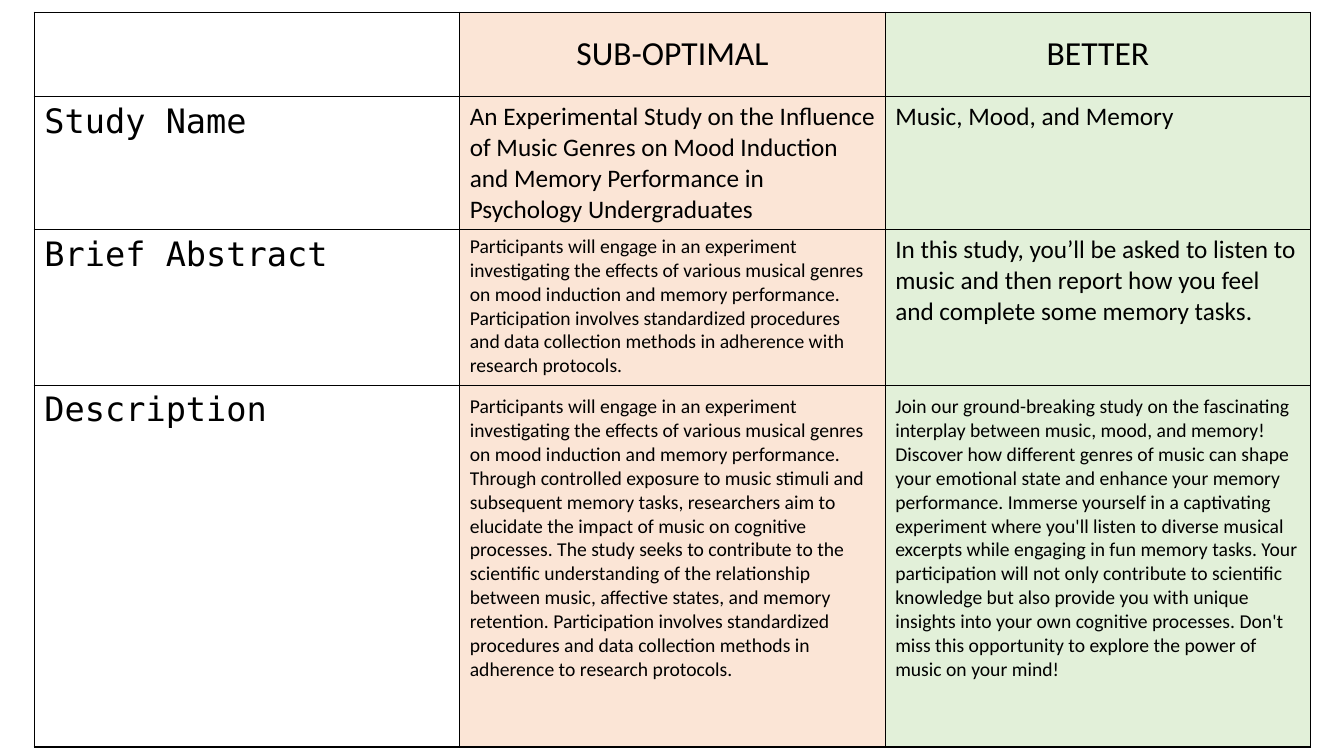
from lxml import etree
from pptx import Presentation
from pptx import util as u
from pptx.dml.color import RGBColor
from pptx.enum import text
from pptx.oxml import ns

BLACK = RGBColor(0x00, 0x00, 0x00)
PEACH = RGBColor(0xFB, 0xE5, 0xD6)
GREEN = RGBColor(0xE2, 0xF0, 0xD9)

COLUMN_FILLS = [None, PEACH, GREEN]
COLUMN_WIDTH = 4.22
ROW_HEIGHTS = [0.84, 1.32, 1.54, 3.59]

# Each row holds a label, the sub-optimal wording and the better wording
ROWS = [
    ["", "SUB-OPTIMAL", "BETTER"],
    ["Study Name",
     "An Experimental Study on the Influence of Music Genres on Mood Induction "
     "and Memory Performance in Psychology Undergraduates",
     "Music, Mood, and Memory"],
    ["Brief Abstract",
     "Participants will engage in an experiment investigating the effects of various "
     "musical genres on mood induction and memory performance. Participation involves "
     "standardized procedures and data collection methods in adherence with research "
     "protocols.",
     "In this study, you’ll be asked to listen to music and then report how you feel "
     "and complete some memory tasks."],
    ["Description",
     "Participants will engage in an experiment investigating the effects of various "
     "musical genres on mood induction and memory performance. Through controlled "
     "exposure to music stimuli and subsequent memory tasks, researchers aim to "
     "elucidate the impact of music on cognitive processes. The study seeks to "
     "contribute to the scientific understanding of the relationship between music, "
     "affective states, and memory retention. Participation involves standardized "
     "procedures and data collection methods in adherence to research protocols.",
     "Join our ground-breaking study on the fascinating interplay between music, mood, "
     "and memory! Discover how different genres of music can shape your emotional state "
     "and enhance your memory performance. Immerse yourself in a captivating experiment "
     "where you'll listen to diverse musical excerpts while engaging in fun memory "
     "tasks. Your participation will not only contribute to scientific knowledge but "
     "also provide you with unique insights into your own cognitive processes. Don't "
     "miss this opportunity to explore the power of music on your mind!"],
]
FONT_SIZES = [[24, 24, 24], [24, 18, 18], [24, 14, 18], [24, 14, 14]]


def add_borders(cell, color, width):
    """Draw a solid line on all four sides of a table cell."""
    properties = cell._tc.get_or_add_tcPr()
    for position, side in enumerate(["lnL", "lnR", "lnT", "lnB"]):
        line = etree.Element(ns.qn(f"a:{side}"), w=str(u.Pt(width)))
        fill = etree.SubElement(line, ns.qn("a:solidFill"))
        etree.SubElement(fill, ns.qn("a:srgbClr"), val=str(color))
        properties.insert(position, line)


deck = Presentation()
deck.slide_width = u.Inches(13.33)
deck.slide_height = u.Inches(7.5)
page = deck.slides.add_slide(deck.slide_layouts[6])

# Comparison table
frame = page.shapes.add_table(
    len(ROWS), len(COLUMN_FILLS), u.Inches(0.34), u.Inches(0.12),
    u.Inches(COLUMN_WIDTH * len(COLUMN_FILLS)), u.Inches(sum(ROW_HEIGHTS)))
table = frame.table
table.first_row = False
table.horz_banding = False
for column in table.columns:
    column.width = u.Inches(COLUMN_WIDTH)
for row, height in zip(table.rows, ROW_HEIGHTS):
    row.height = u.Inches(height)

# Cell text, fills and borders
for r, wordings in enumerate(ROWS):
    for c, wording in enumerate(wordings):
        cell = table.cell(r, c)
        if COLUMN_FILLS[c] is None:
            cell.fill.background()
        else:
            cell.fill.solid()
            cell.fill.fore_color.rgb = COLUMN_FILLS[c]
        add_borders(cell, BLACK, 1)

        para = cell.text_frame.paragraphs[0]
        para.text = wording
        for span in para.runs:
            span.font.name = "DejaVu Sans Mono" if c == 0 else "Calibri"
            span.font.size = u.Pt(FONT_SIZES[r][c])
            span.font.color.rgb = BLACK

        # Centred column heads, and roomier description cells
        if r == 0:
            cell.vertical_anchor = text.MSO_ANCHOR.MIDDLE
            para.alignment = text.PP_ALIGN.CENTER
        elif r == 3 and c > 0:
            cell.margin_top = cell.margin_bottom = u.Inches(0.1)

deck.save("out.pptx")
